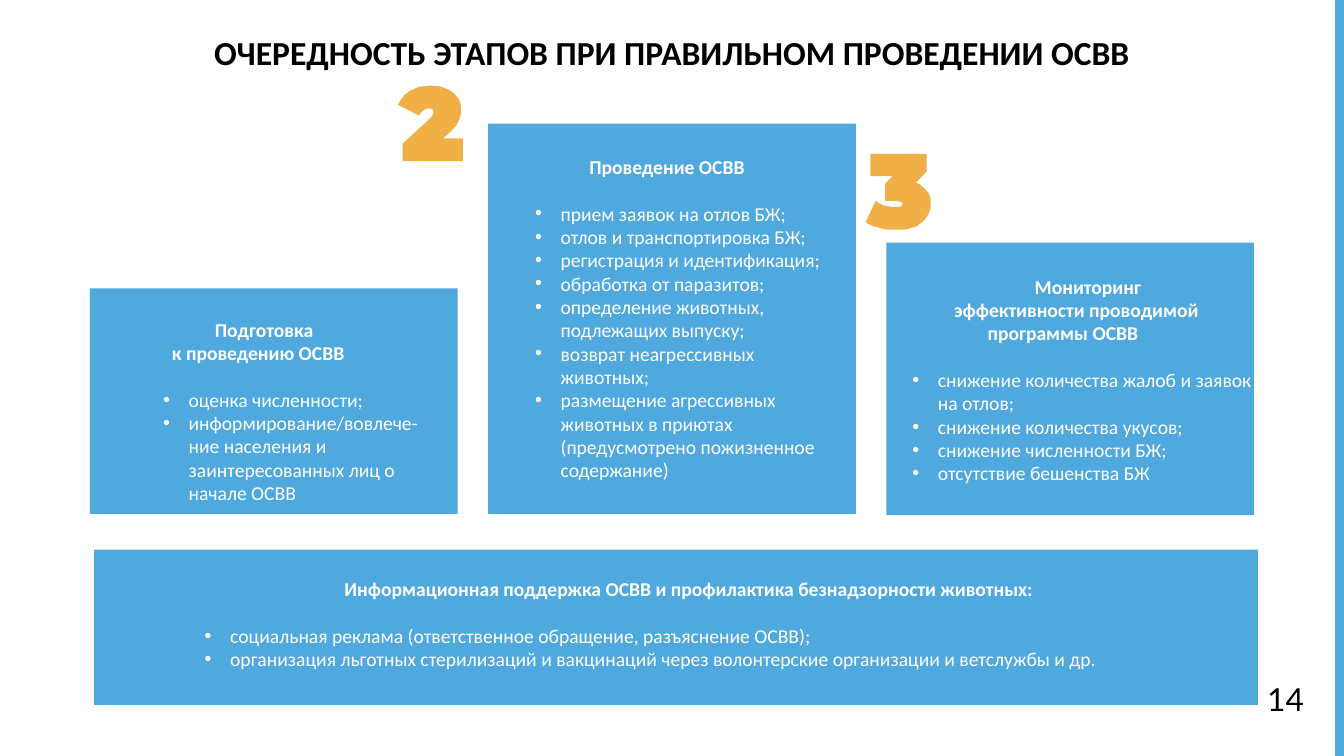
import pptx
import pptx.util
import pptx.dml.color
import pptx.enum.shapes
import pptx.enum.text
from lxml import etree

Cm = pptx.util.Cm
Pt = pptx.util.Pt
ALIGN = pptx.enum.text.PP_ALIGN
RECT = pptx.enum.shapes.MSO_SHAPE.RECTANGLE
A = "{http://schemas.openxmlformats.org/drawingml/2006/main}"
COLORS = {"blue": "4FA8DE", "gold": "F1B045", "white": "FFFFFF", "black": "000000"}
LEADING = Pt(25)
HANGING = 0.96
COLUMN_W, COLUMN_PITCH, LEFT = 13.9, 15.05, 3.4

TWO = [(97, 113), (7, 113), (7, 87), (46, 51), (50, 47), (52, 44), (53, 41), (53, 38),
       (52, 36), (50, 35), (46, 34), (42, 35), (39, 36), (36, 39), (33, 42), (32, 45),
       (0, 29), (4, 22), (7, 18), (10, 14), (14, 11), (18, 8), (23, 6), (27, 4), (32, 2),
       (38, 1), (43, 1), (49, 0), (55, 1), (61, 1), (67, 3), (72, 5), (77, 7), (81, 10),
       (85, 13), (88, 17), (91, 21), (93, 26), (94, 31), (94, 42), (93, 47), (91, 51),
       (89, 56), (87, 60), (83, 64), (80, 68), (75, 72), (67, 79), (97, 79)]
THREE = [(46, 113), (34, 113), (28, 112), (23, 111), (17, 109), (12, 108), (7, 106),
         (3, 104), (0, 102), (15, 70), (18, 72), (23, 75), (28, 77), (34, 78), (39, 79),
         (51, 79), (54, 77), (55, 74), (55, 73), (54, 72), (51, 71), (46, 70), (29, 70),
         (29, 44), (40, 33), (7, 33), (7, 0), (91, 0), (91, 26), (75, 43), (80, 45),
         (84, 48), (88, 52), (91, 55), (94, 59), (96, 64), (97, 69), (97, 80), (96, 84),
         (94, 89), (91, 94), (88, 98), (85, 101), (81, 104), (77, 107), (73, 109),
         (68, 110), (63, 112), (57, 113), (52, 113)]


def paint(sp, color):
    sp.shadow.inherit = False
    sp.fill.solid()
    sp.fill.fore_color.rgb = pptx.dml.color.RGBColor.from_string(COLORS[color])
    sp.line.fill.background()


def add_run(p, text, size, color, bold=False, font="Calibri"):
    r = p.add_run()
    r.text = text
    r.font.name = font
    r.font.size = Pt(size)
    r.font.bold = bold
    r.font.color.rgb = pptx.dml.color.RGBColor.from_string(COLORS[color])


def reset_frame(tf, wrap=True):
    tf.word_wrap = wrap
    tf.auto_size = pptx.enum.text.MSO_AUTO_SIZE.NONE
    tf.vertical_anchor = pptx.enum.text.MSO_ANCHOR.TOP
    tf.margin_left = tf.margin_top = tf.margin_right = tf.margin_bottom = 0


def indent(p, left, first):
    pPr = p._p.get_or_add_pPr()
    pPr.set("marL", str(Cm(left)))
    pPr.set("indent", str(Cm(first)))
    return pPr


def add_rect(s, box, color):
    sp = s.shapes.add_shape(RECT, *[Cm(v) for v in box])
    paint(sp, color)


def add_title(s, box, text):
    sp = s.shapes.title
    sp.left, sp.top, sp.width, sp.height = [Cm(v) for v in box]
    reset_frame(sp.text_frame)
    p = sp.text_frame.paragraphs[0]
    p.alignment = ALIGN.CENTER
    p.line_spacing = 1.0
    add_run(p, text, 36, "black", True)


def add_panel(s, box, heading, items, top, list_left, right=0):
    x, y, w, h = box
    add_rect(s, box, "blue")
    sp = s.shapes.add_textbox(Cm(x), Cm(y + top), Cm(w - right), Cm(h - top))
    tf = sp.text_frame
    reset_frame(tf)
    for i, (text, align, left, first) in enumerate(heading):
        p = tf.paragraphs[0] if i == 0 else tf.add_paragraph()
        indent(p, left, first)
        p.alignment = align
        p.line_spacing = LEADING
        add_run(p, text, 21, "white", True)
    for i, text in enumerate(items):
        p = tf.add_paragraph()
        pPr = indent(p, list_left, -HANGING)
        etree.SubElement(pPr, A + "buFont").set("typeface", "Arial")
        etree.SubElement(pPr, A + "buChar").set("char", "•")
        p.line_spacing = LEADING
        p.space_before = LEADING if i == 0 else Pt(0)
        add_run(p, text, 21, "white")


def add_digit(s, box, points):
    x, y, w = box
    scale = Cm(w) / max(px for px, _ in points)
    fb = s.shapes.build_freeform(*points[0], scale=1 / 1 * scale)
    fb.add_line_segments(points[1:], close=True)
    paint(fb.convert_to_shape(Cm(x), Cm(y)), "gold")


def add_page_number(s, box, text):
    sp = s.shapes.add_textbox(*[Cm(v) for v in box])
    reset_frame(sp.text_frame, False)
    add_run(sp.text_frame.paragraphs[0], text, 34, "black", font="Lato")


def main():
    prs = pptx.Presentation()
    prs.slide_width, prs.slide_height = Cm(50.8), Cm(28.58)
    s = prs.slides.add_slide(prs.slide_layouts[5])
    add_title(s, (4.85, 1.19, 41.1, 1.6),
              "ОЧЕРЕДНОСТЬ ЭТАПОВ ПРИ ПРАВИЛЬНОМ ПРОВЕДЕНИИ ОСВВ")
    add_rect(s, (50.47, 0, 0.33, 28.58), "blue")

    columns = [LEFT + i * COLUMN_PITCH for i in range(3)]
    add_panel(s, (columns[0], 10.9, COLUMN_W, 8.53),
              [("Подготовка", ALIGN.LEFT, 4.72, 0),
               ("к проведению ОСВВ", ALIGN.LEFT, 3.1, 0)],
              ["оценка численности;",
               "информирование/вовлече-ние населения и заинтересованных лиц о начале ОСВВ"],
              1.12, 3.73, 1.12)
    add_panel(s, (columns[1], 4.67, COLUMN_W, 14.76),
              [("Проведение ОСВВ", ALIGN.CENTER, 0, 0)],
              ["прием заявок на отлов БЖ;",
               "отлов и транспортировка БЖ;",
               "регистрация и идентификация;",
               "обработка от паразитов;",
               "определение животных, подлежащих выпуску;",
               "возврат неагрессивных животных;",
               "размещение агрессивных животных в приютах "
               "(предусмотрено пожизненное содержание)"],
              1.19, 2.74, 0.38)
    add_panel(s, (columns[2], 9.17, COLUMN_W, 10.31),
              [("Мониторинг эффективности проводимой", ALIGN.LEFT, 2.56, 3.05),
               ("программы ОСВВ", ALIGN.LEFT, 3.83, 0)],
              ["снижение количества жалоб и заявок на отлов;",
               "снижение количества укусов;",
               "снижение численности БЖ;",
               "отсутствие бешенства БЖ"],
              1.22, 1.95)
    add_panel(s, (3.56, 20.78, 43.99, 5.87),
              [("Информационная поддержка ОСВВ и профилактика безнадзорности животных:",
                ALIGN.CENTER, HANGING, 0)],
              ["социальная реклама (ответственное обращение, разъяснение ОСВВ);",
               "организация льготных стерилизаций и вакцинаций через волонтерские "
               "организации и ветслужбы и др."],
              1.04, 5.14)

    add_digit(s, (15.04, 3.23, 2.46), TWO)
    add_digit(s, (32.72, 5.82, 2.46), THREE)
    add_page_number(s, (47.9, 25.7, 1.45, 1.5), "14")
    prs.save("out.pptx")


if __name__ == "__main__":
    main()
